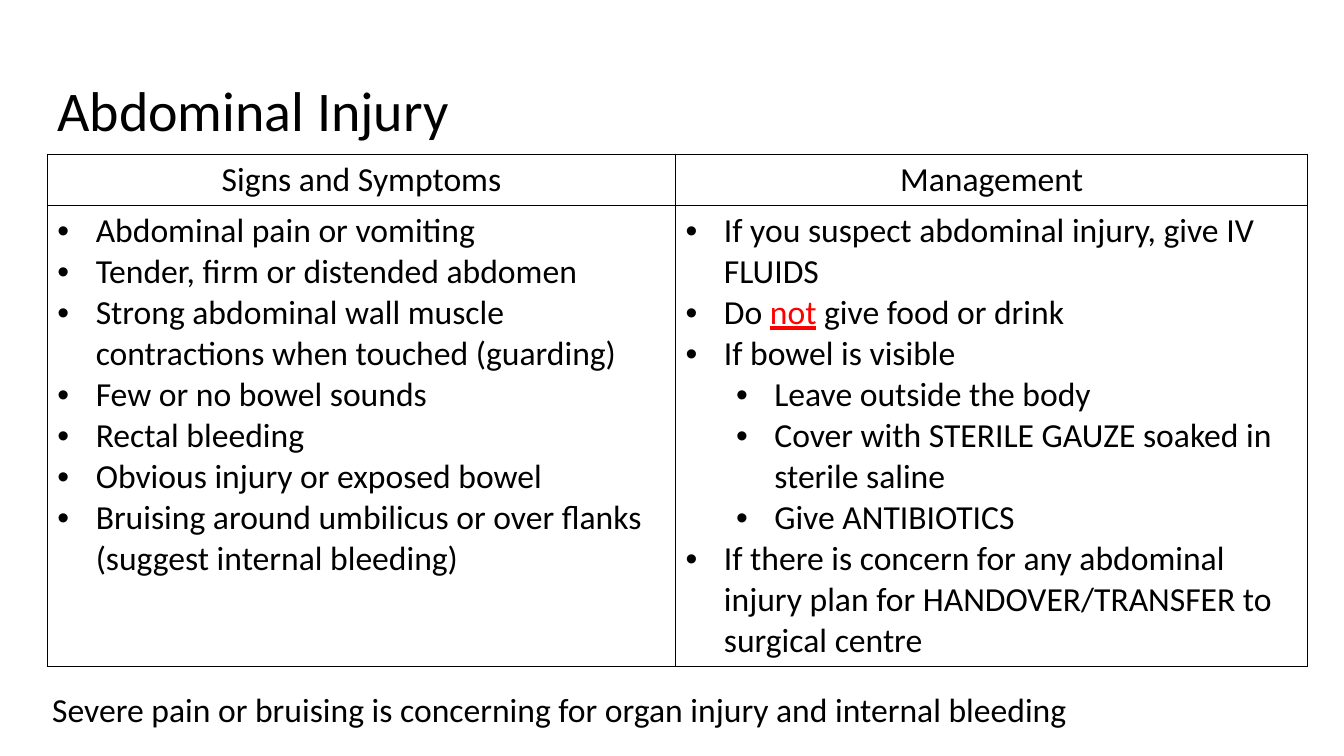
from dataclasses import dataclass

from pptx import Presentation
from pptx import util as u
from pptx.dml.color import RGBColor
from pptx.enum import text as t
from pptx.oxml import ns
from lxml import etree


@dataclass(frozen=True)
class Theme:
    font: str = "Calibri"
    ink: str = "000000"
    paper: str = "FFFFFF"
    warning: str = "FF0000"
    title_size: int = 40
    body_size: int = 24
    border_width: int = 1


THEME = Theme()

SIGNS = [
    (0, "Abdominal pain or vomiting"),
    (0, "Tender, firm or distended abdomen"),
    (0, "Strong abdominal wall muscle contractions when touched (guarding)"),
    (0, "Few or no bowel sounds"),
    (0, "Rectal bleeding"),
    (0, "Obvious injury or exposed bowel"),
    (0, "Bruising around umbilicus or over flanks (suggest internal bleeding)"),
]
# Text between asterisks is a warning.
MANAGEMENT = [
    (0, "If you suspect abdominal injury, give IV FLUIDS"),
    (0, "Do *not* give food or drink"),
    (0, "If bowel is visible"),
    (1, "Leave outside the body"),
    (1, "Cover with STERILE GAUZE soaked in sterile saline"),
    (1, "Give ANTIBIOTICS"),
    (0, "If there is concern for any abdominal injury plan for "
        "HANDOVER/TRANSFER to surgical centre"),
]


def add_bullet(para, level):
    para.level = level
    props = para._p.get_or_add_pPr()
    props.set("marL", str(u.Inches(0.38 + 0.5 * level)))
    props.set("indent", str(u.Inches(-0.38)))
    etree.SubElement(props, ns.qn("a:buFont")).set("typeface", "Arial")
    etree.SubElement(props, ns.qn("a:buChar")).set("char", "•")


def write(para, text, size=THEME.body_size, align=t.PP_ALIGN.LEFT,
          line_spacing=None, bullet_level=None):
    """Fill a paragraph, colouring and underlining any text between asterisks."""
    if bullet_level is not None:
        add_bullet(para, bullet_level)
    para.alignment = align
    if line_spacing:
        para.line_spacing = line_spacing
    for index, piece in enumerate(text.split("*")):
        is_warning = index % 2 == 1
        span = para.add_run()
        span.text = piece
        span.font.name = THEME.font
        span.font.size = u.Pt(size)
        span.font.underline = is_warning
        span.font.color.rgb = RGBColor.from_string(
            THEME.warning if is_warning else THEME.ink)


def add_text(page, box, text, anchor=t.MSO_ANCHOR.TOP, **form):
    frame = page.shapes.add_textbox(*map(u.Inches, box)).text_frame
    frame.word_wrap = True
    frame.vertical_anchor = anchor
    write(frame.paragraphs[0], text, **form)


def style_cell(cell):
    props = cell._tc.get_or_add_tcPr()
    for side in ("lnL", "lnR", "lnT", "lnB"):
        line = etree.SubElement(props, ns.qn(f"a:{side}"),
                                w=str(u.Pt(THEME.border_width)))
        fill = etree.SubElement(line, ns.qn("a:solidFill"))
        etree.SubElement(fill, ns.qn("a:srgbClr"), val=THEME.ink)
    cell.fill.solid()
    cell.fill.fore_color.rgb = RGBColor.from_string(THEME.paper)


def add_care_table(page, box, columns, header_height=0.51, first_width=6.23):
    left, top, width, height = box
    table = page.shapes.add_table(2, len(columns), *map(u.Inches, box)).table
    table.first_row = table.horz_banding = False
    for row, size in zip(table.rows, (header_height, height - header_height)):
        row.height = u.Inches(size)
    for column, size in zip(table.columns, (first_width, width - first_width)):
        column.width = u.Inches(size)
    for index, (heading, items) in enumerate(columns):
        head, body = table.cell(0, index), table.cell(1, index)
        style_cell(head)
        style_cell(body)
        write(head.text_frame.paragraphs[0], heading, align=t.PP_ALIGN.CENTER)
        frame = body.text_frame
        for number, (level, text) in enumerate(items):
            para = frame.add_paragraph() if number else frame.paragraphs[0]
            write(para, text, bullet_level=level)


def add_injury_slide(deck):
    page = deck.slides.add_slide(deck.slide_layouts[6])
    add_text(page, (0.47, 0.4, 12.4, 1.45), "Abdominal Injury",
             anchor=t.MSO_ANCHOR.MIDDLE, size=THEME.title_size, line_spacing=0.9)
    add_care_table(page, (0.47, 1.53, 12.5, 5.08),
                   [("Signs and Symptoms", SIGNS), ("Management", MANAGEMENT)])
    add_text(page, (0.42, 6.79, 12.5, 0.5),
             "Severe pain or bruising is concerning for organ injury "
             "and internal bleeding")


def main():
    deck = Presentation()
    deck.slide_width, deck.slide_height = u.Inches(13.33), u.Inches(7.5)
    add_injury_slide(deck)
    deck.save("out.pptx")


if __name__ == "__main__":
    main()
